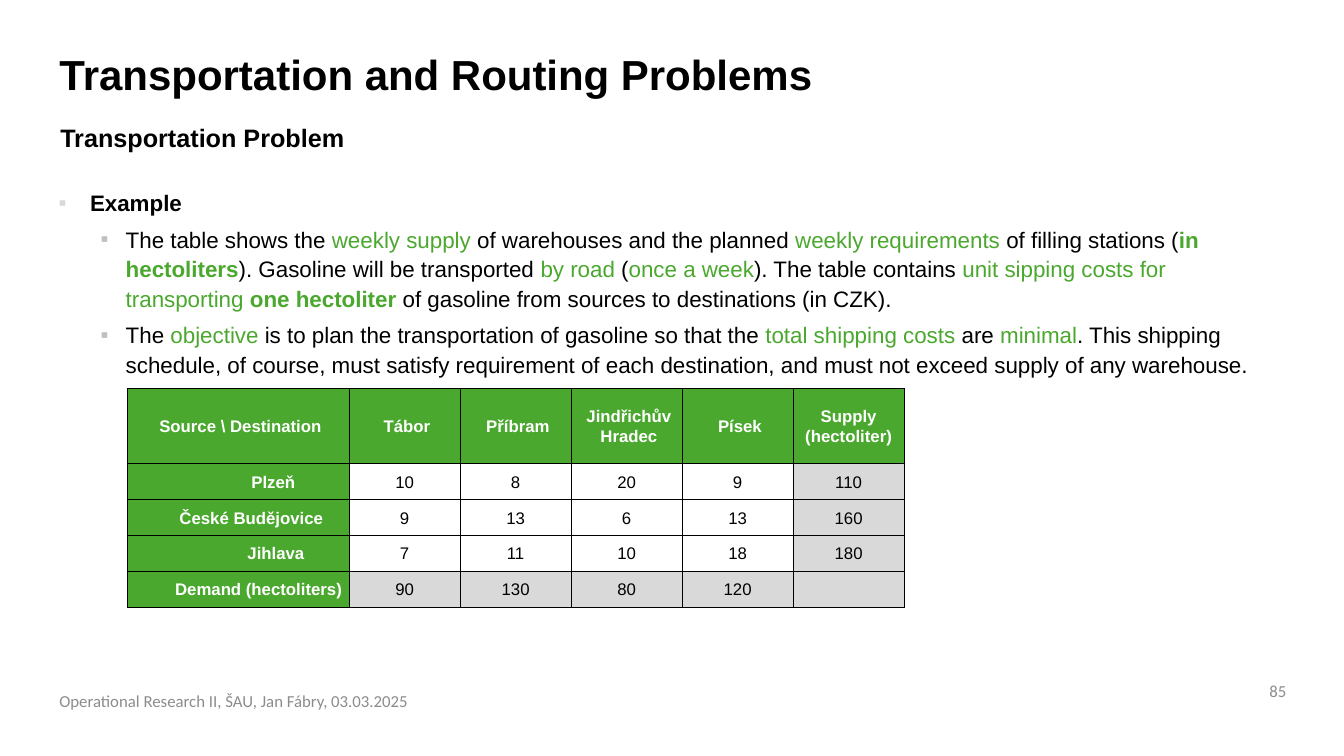
"""Build the transportation problem example slide."""
import pptx
import pptx.util
import pptx.dml.color
import pptx.enum.text
import pptx.oxml.ns
import lxml.etree

Pt = pptx.util.Pt
RGB = pptx.dml.color.RGBColor
ALIGN = pptx.enum.text.PP_ALIGN
ANCHOR = pptx.enum.text.MSO_ANCHOR
NO_FIT = pptx.enum.text.MSO_AUTO_SIZE.NONE
qn = pptx.oxml.ns.qn

GREEN = RGB(0x4B, 0xA8, 0x2E)
BLACK = RGB(0, 0, 0)
WHITE = RGB(0xFF, 0xFF, 0xFF)
PALE = RGB(0xD9, 0xD9, 0xD9)
SILVER = RGB(0xBF, 0xBF, 0xBF)
GREY = RGB(0x8C, 0x8C, 0x8C)

PLAIN = {"name": "Arial", "size": Pt(16), "bold": False, "color": BLACK}
BOLD = {**PLAIN, "bold": True}
KEY = {**PLAIN, "color": GREEN}
STRONG = {**KEY, "bold": True}
HEADING = {**BOLD, "size": Pt(30)}
SUBHEADING = {**BOLD, "size": Pt(18)}
SMALL = {**PLAIN, "name": "Calibri", "size": Pt(12), "color": GREY}
VALUE = {**PLAIN, "size": Pt(12)}
LABEL = {**VALUE, "bold": True, "color": WHITE}

HEADING_TEXT = "Transportation and Routing Problems"
SUBHEADING_TEXT = "Transportation Problem"
FOOTER_TEXT = "Operational Research II, ŠAU, Jan Fábry, 03.03.2025"
PAGE = "85"

EXAMPLE = [
    (0, [("Example", BOLD)]),
    (1, [("The table shows the ", PLAIN), ("weekly supply ", KEY),
         ("of warehouses and the planned ", PLAIN), ("weekly requirements ", KEY),
         ("of filling stations (", PLAIN), ("in hectoliters", STRONG),
         ("). Gasoline will be transported ", PLAIN), ("by road ", KEY),
         ("(", PLAIN), ("once a week", KEY), ("). The table contains ", PLAIN),
         ("unit sipping costs for transporting ", KEY), ("one hectoliter", STRONG),
         (" of gasoline from sources to destinations (in CZK).", PLAIN)]),
    (1, [("The ", PLAIN), ("objective", KEY),
         (" is to plan the transportation of gasoline so that the ", PLAIN),
         ("total shipping costs", KEY), (" are ", PLAIN), ("minimal", KEY),
         (". This shipping schedule, of course, must satisfy requirement of each "
          "destination, and must not exceed supply of any warehouse.", PLAIN)]),
]
LEVELS = [
    {"left": 22.5, "hanging": 22.5, "bullet": PALE, "before": 0},
    {"left": 48, "hanging": 18, "bullet": SILVER, "before": 5},
]

COSTS = [
    ["Source \\ Destination", "Tábor", "Příbram", "Jindřichův Hradec", "Písek",
     "Supply (hectoliter)"],
    ["Plzeň", "10", "8", "20", "9", "110"],
    ["České Budějovice", "9", "13", "6", "13", "160"],
    ["Jihlava", "7", "11", "10", "18", "180"],
    ["Demand (hectoliters)", "90", "130", "80", "120", ""],
]
SOURCE_INSETS = [5, 38.5, 18.5, 32, 5]
COLUMN_WIDTHS = [158.5] + [79.3] * 5
ROW_HEIGHTS = [53.6] + [25.7] * 4


def assign(target, values):
    """Set every attribute named in values."""
    for key, value in values.items():
        setattr(target, key, value)


def place(shape, left, top, width, height):
    """Move and size a shape, in points."""
    assign(shape, {"left": Pt(left), "top": Pt(top),
                   "width": Pt(width), "height": Pt(height)})


def write(paragraph, runs, layout):
    """Fill a paragraph with styled runs."""
    assign(paragraph, layout)
    for text, style in runs:
        run = paragraph.add_run()
        run.text = text
        assign(run.font, {k: v for k, v in style.items() if k != "color"})
        run.font.color.rgb = style["color"]


def add_color(parent, color):
    """Append an RGB colour element."""
    lxml.etree.SubElement(parent, qn("a:srgbClr"), val=str(color))


def add_bullet(paragraph, level):
    """Give a paragraph its hanging indent and square bullet."""
    properties = paragraph._p.get_or_add_pPr()
    properties.set("marL", str(Pt(level["left"])))
    properties.set("indent", str(-Pt(level["hanging"])))
    add_color(lxml.etree.SubElement(properties, qn("a:buClr")), level["bullet"])
    lxml.etree.SubElement(properties, qn("a:buFont"), typeface="Arial")
    lxml.etree.SubElement(properties, qn("a:buChar"), char="▪")


def add_borders(cell):
    """Draw a thin black line on all sides of a cell."""
    properties = cell._tc.get_or_add_tcPr()
    for side in ("a:lnL", "a:lnR", "a:lnT", "a:lnB"):
        line = lxml.etree.SubElement(properties, qn(side), w=str(Pt(1)))
        add_color(lxml.etree.SubElement(line, qn("a:solidFill")), BLACK)


def add_line(slide, box, runs, align, wrap, anchor):
    """Add a one-paragraph text box."""
    shape = slide.shapes.add_textbox(0, 0, 0, 0)
    place(shape, *box)
    assign(shape.text_frame, {"word_wrap": wrap, "auto_size": NO_FIT,
                              "vertical_anchor": anchor})
    write(shape.text_frame.paragraphs[0], runs, {"alignment": align})


def add_example(body):
    """Write the bulleted example."""
    place(body, 34.6, 129.6, 871.2, 326)
    assign(body.text_frame, {"auto_size": NO_FIT, "vertical_anchor": ANCHOR.TOP})
    for index, (depth, runs) in enumerate(EXAMPLE):
        frame = body.text_frame
        paragraph = frame.add_paragraph() if index else frame.paragraphs[0]
        level = LEVELS[depth]
        add_bullet(paragraph, level)
        write(paragraph, runs, {"level": depth, "line_spacing": 1.1,
                                "space_before": Pt(level["before"])})


def add_costs(slide):
    """Add the table of unit costs, supply and demand."""
    rows, columns = len(COSTS), len(COSTS[0])
    costs = slide.shapes.add_table(rows, columns, Pt(90.9), Pt(277.5),
                                   Pt(sum(COLUMN_WIDTHS)), Pt(sum(ROW_HEIGHTS))).table
    for column, width in zip(costs.columns, COLUMN_WIDTHS):
        column.width = Pt(width)
    for row, height in zip(costs.rows, ROW_HEIGHTS):
        row.height = Pt(height)
    for r, entries in enumerate(COSTS):
        for c, entry in enumerate(entries):
            cell = costs.cell(r, c)
            label = r == 0 or c == 0
            total = r == rows - 1 or c == columns - 1
            right = SOURCE_INSETS[r] if c == 0 else 5
            left = 8.3 if r == 0 and c < columns - 1 else 5
            assign(cell, {"margin_left": Pt(left), "margin_right": Pt(right),
                          "margin_top": 0, "margin_bottom": 0,
                          "vertical_anchor": ANCHOR.MIDDLE})
            add_borders(cell)
            cell.fill.solid()
            cell.fill.fore_color.rgb = GREEN if label else PALE if total else WHITE
            runs = [(entry, LABEL if label else VALUE)] if entry else []
            write(cell.text_frame.paragraphs[0], runs, {
                "alignment": ALIGN.RIGHT if c == 0 and r else ALIGN.CENTER,
                "line_spacing": 1.07, "space_after": Pt(8)})


def main():
    """Compose and save the slide."""
    deck = pptx.Presentation()
    assign(deck, {"slide_width": Pt(960), "slide_height": Pt(540)})
    slide = deck.slides.add_slide(deck.slide_layouts[1])
    heading, body = slide.placeholders
    place(heading, 35.3, 35.3, 729.4, 41)
    assign(heading.text_frame, {"auto_size": NO_FIT, "vertical_anchor": ANCHOR.TOP})
    write(heading.text_frame.paragraphs[0], [(HEADING_TEXT, HEADING)],
          {"alignment": ALIGN.LEFT, "line_spacing": 0.9})
    add_example(body)
    add_line(slide, (36, 84.2, 728, 28.8), [(SUBHEADING_TEXT, SUBHEADING)],
             ALIGN.LEFT, True, ANCHOR.TOP)
    add_line(slide, (35.3, 486, 516.2, 28.8), [(FOOTER_TEXT, SMALL)],
             ALIGN.LEFT, True, ANCHOR.MIDDLE)
    add_line(slide, (900.7, 481.7, 25.2, 23.8), [(PAGE, SMALL)],
             ALIGN.RIGHT, False, ANCHOR.MIDDLE)
    add_costs(slide)
    deck.save("out.pptx")


if __name__ == "__main__":
    main()
